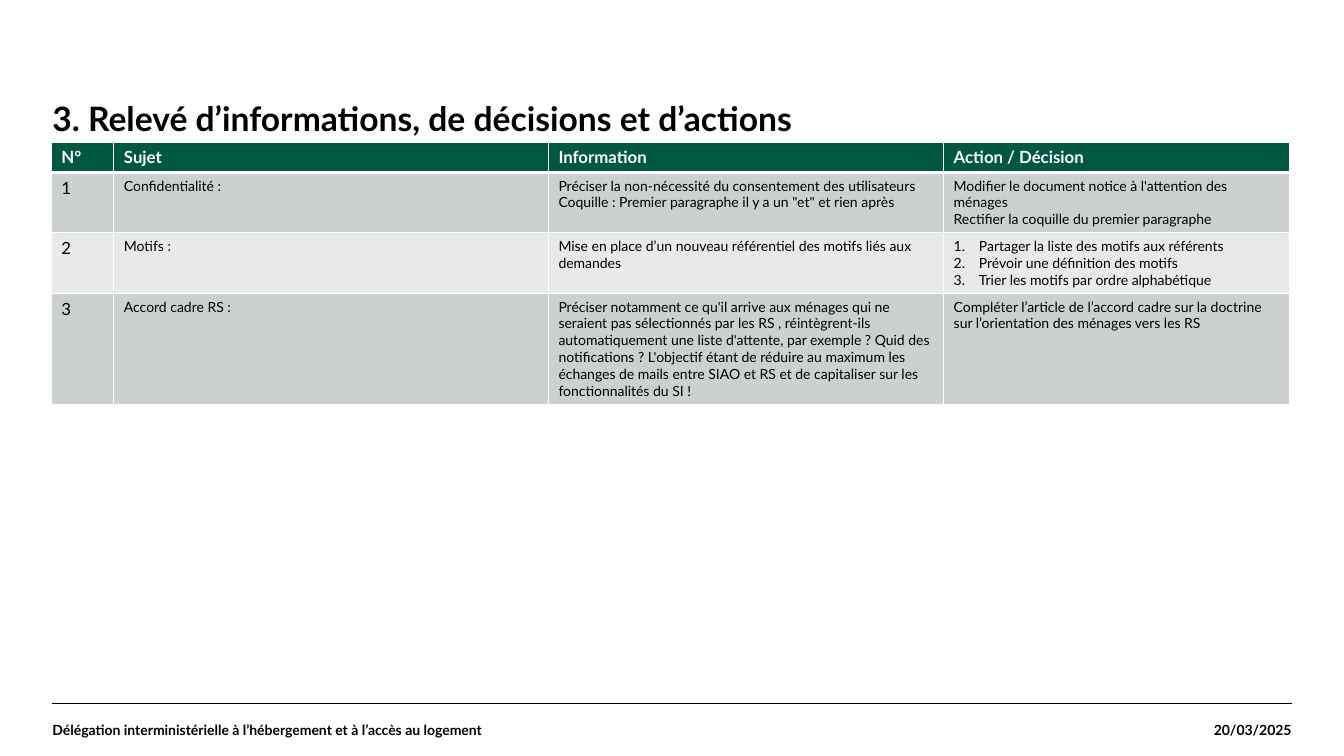
from lxml import etree
from pptx import Presentation
from pptx.dml.color import RGBColor
from pptx.enum.shapes import MSO_CONNECTOR
from pptx.enum.text import MSO_ANCHOR, MSO_AUTO_SIZE, PP_ALIGN
from pptx.oxml.ns import qn
from pptx.util import Inches, Pt

STRAIGHT = MSO_CONNECTOR.STRAIGHT
TOP, MIDDLE = MSO_ANCHOR.TOP, MSO_ANCHOR.MIDDLE
LEFT, RIGHT = PP_ALIGN.LEFT, PP_ALIGN.RIGHT
FIXED_SIZE = MSO_AUTO_SIZE.NONE

SLIDE_WIDTH, SLIDE_HEIGHT = 13.33, 7.5
MARGIN = 0.52
CONTENT_WIDTH = SLIDE_WIDTH - 2 * MARGIN
FOOTER_TOP = 6.98
FOOTER_HEIGHT = SLIDE_HEIGHT - FOOTER_TOP
DATE_WIDTH = 1.71
FONT = "Lato"
BLACK, WHITE, GREEN = "000000", "FFFFFF", "005841"
BANDS = ("CCD1CF", "E7EAE9")
COLUMN_WIDTHS = (0.62, 4.31, 3.92, 3.43)
ROW_HEIGHTS = (0.3, 0.6, 0.6, 1.1)
NUMBERED_CELL = (2, 3)

ROWS = (
    (["N°"], ["Sujet"], ["Information"], ["Action / Décision"]),
    (
        ["1"],
        ["Confidentialité :"],
        [
            "Préciser la non-nécessité du consentement des utilisateurs",
            'Coquille : Premier paragraphe il y a un "et" et rien après',
        ],
        [
            "Modifier le document notice à l'attention des ménages",
            "Rectifier la coquille du premier paragraphe",
        ],
    ),
    (
        ["2"],
        ["Motifs :"],
        ["Mise en place d’un nouveau référentiel des motifs liés aux demandes"],
        [
            "Partager la liste des motifs aux référents",
            "Prévoir une définition des motifs",
            "Trier les motifs par ordre alphabétique",
        ],
    ),
    (
        ["3"],
        ["Accord cadre RS :"],
        [
            "Préciser notamment ce qu'il arrive aux ménages qui ne seraient pas "
            "sélectionnés par les RS , réintègrent-ils automatiquement une liste "
            "d'attente, par exemple ? Quid des notifications ? L'objectif étant de "
            "réduire au maximum les échanges de mails entre SIAO et RS et de "
            "capitaliser sur les fonctionnalités du SI !"
        ],
        [
            "Compléter l’article de l’accord cadre sur la doctrine sur "
            "l’orientation des ménages vers les RS"
        ],
    ),
)


def color(hex_value):
    return RGBColor.from_string(hex_value)


def number_paragraph(paragraph):
    properties = paragraph._p.get_or_add_pPr()
    properties.set("marL", str(Inches(0.25)))
    properties.set("indent", str(-Inches(0.25)))
    etree.SubElement(properties, qn("a:buFont"), typeface="+mj-lt")
    etree.SubElement(properties, qn("a:buAutoNum"), type="arabicPeriod")


def write_text(frame, lines, size, text_color=BLACK, bold=False, align=LEFT, numbered=False):
    for index, line in enumerate(lines):
        paragraph = frame.add_paragraph() if index else frame.paragraphs[0]
        paragraph.alignment = align
        if numbered:
            number_paragraph(paragraph)
        run = paragraph.add_run()
        run.text = line
        run.font.name = FONT
        run.font.size = Pt(size)
        run.font.bold = bold
        run.font.color.rgb = color(text_color)


def prepare_frame(frame, anchor):
    frame.margin_left = frame.margin_right = frame.margin_top = frame.margin_bottom = 0
    frame.word_wrap = True
    frame.auto_size = FIXED_SIZE
    frame.vertical_anchor = anchor


def add_title(slide, text):
    title = slide.shapes.title
    title.left, title.top = Inches(MARGIN), Inches(1.02)
    title.width, title.height = Inches(CONTENT_WIDTH), Inches(1.05)
    prepare_frame(title.text_frame, TOP)
    write_text(title.text_frame, [text], 24, bold=True)
    title.text_frame.paragraphs[0].line_spacing = 0.9


def add_footer_text(slide, text, left, width, align):
    box = slide.shapes.add_textbox(
        Inches(left), Inches(FOOTER_TOP), Inches(width), Inches(FOOTER_HEIGHT)
    )
    prepare_frame(box.text_frame, MIDDLE)
    write_text(box.text_frame, [text], 10, bold=True, align=align)


def add_footer_rule(slide):
    rule = slide.shapes.add_connector(
        STRAIGHT, Inches(MARGIN), Inches(FOOTER_TOP),
        Inches(MARGIN + CONTENT_WIDTH), Inches(FOOTER_TOP),
    )
    rule.line.color.rgb = color(BLACK)
    rule.line.width = Pt(0.8)
    etree.SubElement(rule._element.spPr, qn("a:effectLst"))


def set_borders(cell, top, bottom):
    properties = cell._tc.get_or_add_tcPr()
    for side, width in (("L", 1), ("R", 1), ("T", top), ("B", bottom)):
        border = etree.SubElement(properties, qn(f"a:ln{side}"), w=str(Pt(width)))
        fill = etree.SubElement(border, qn("a:solidFill"))
        etree.SubElement(fill, qn("a:srgbClr"), val=WHITE)


def fill_cell(cell, lines, row, column):
    header = row == 0
    set_borders(cell, top=3 if row == 1 else 1, bottom=3 if header else 1)
    cell.fill.solid()
    cell.fill.fore_color.rgb = color(GREEN if header else BANDS[(row - 1) % 2])
    write_text(
        cell.text_frame, lines,
        size=12 if header or column == 0 else 10,
        text_color=WHITE if header else BLACK,
        bold=header,
        numbered=(row, column) == NUMBERED_CELL,
    )


def add_decision_table(slide):
    table = slide.shapes.add_table(
        len(ROWS), len(COLUMN_WIDTHS), Inches(0.51), Inches(1.41),
        Inches(sum(COLUMN_WIDTHS)), Inches(sum(ROW_HEIGHTS)),
    ).table
    for column, width in zip(table.columns, COLUMN_WIDTHS):
        column.width = Inches(width)
    for row_index, (row, height) in enumerate(zip(table.rows, ROW_HEIGHTS)):
        row.height = Inches(height)
        for column_index, lines in enumerate(ROWS[row_index]):
            fill_cell(row.cells[column_index], lines, row_index, column_index)


def main():
    presentation = Presentation()
    presentation.slide_width = Inches(SLIDE_WIDTH)
    presentation.slide_height = Inches(SLIDE_HEIGHT)
    slide = presentation.slides.add_slide(presentation.slide_layouts[5])
    add_footer_rule(slide)
    add_title(slide, "3. Relevé d’informations, de décisions et d’actions")
    add_footer_text(
        slide, "20/03/2025", MARGIN + CONTENT_WIDTH - DATE_WIDTH, DATE_WIDTH, RIGHT
    )
    add_footer_text(
        slide, "Délégation interministérielle à l’hébergement et à l’accès au logement",
        MARGIN, 0.7 * CONTENT_WIDTH, LEFT,
    )
    add_decision_table(slide)
    presentation.save("out.pptx")


if __name__ == "__main__":
    main()
